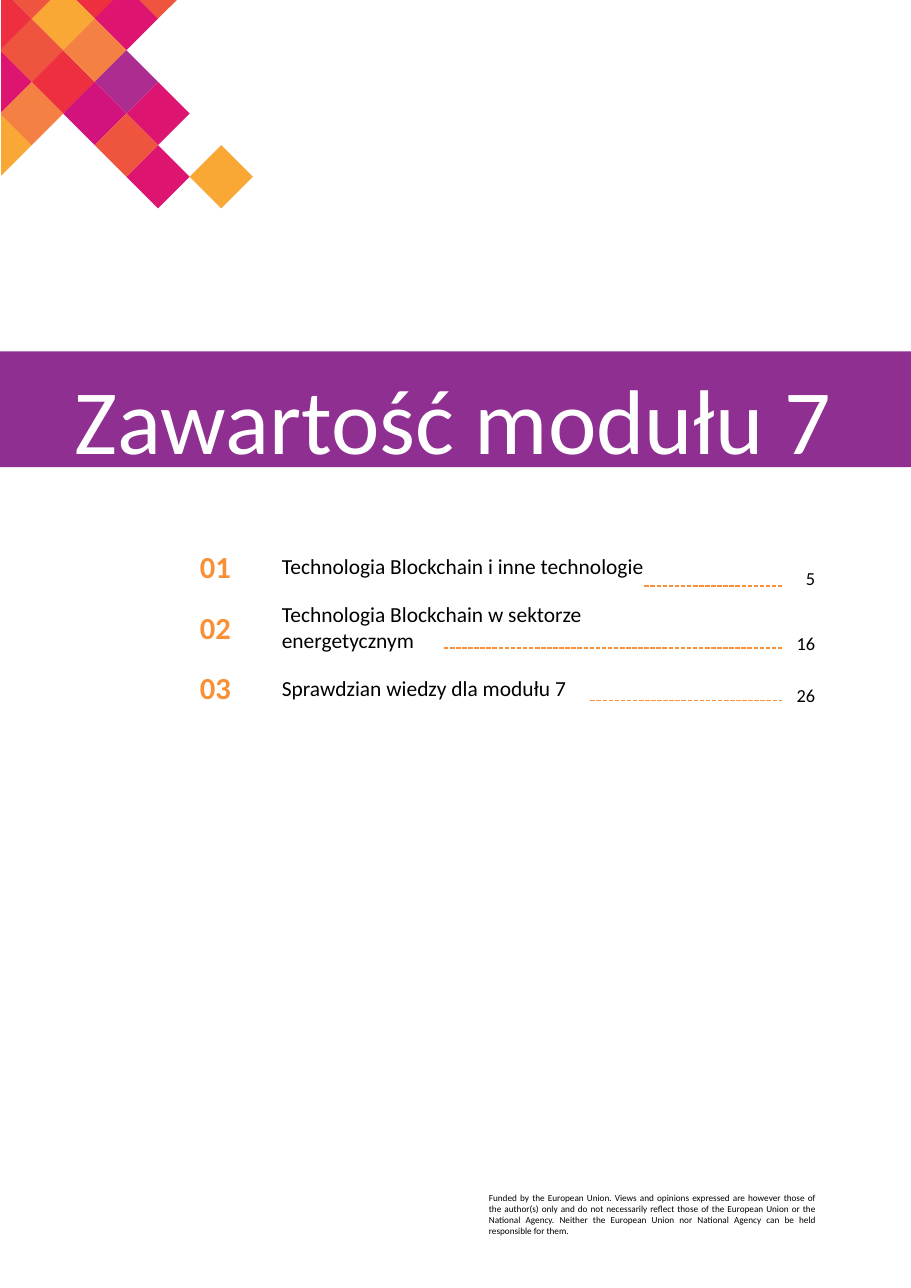
from dataclasses import dataclass

from lxml.etree import SubElement
from pptx import Presentation
from pptx.dml.color import RGBColor
from pptx.enum.dml import MSO_LINE
from pptx.enum.shapes import MSO_CONNECTOR, MSO_SHAPE
from pptx.enum.text import MSO_ANCHOR, MSO_AUTO_SIZE, PP_ALIGN
from pptx.oxml.ns import qn
from pptx.util import Inches, Pt


@dataclass(frozen=True)
class Theme:
    font: str = "Calibri"
    band: str = "8E2F91"
    accent: str = "F79037"
    text: str = "000000"
    on_band: str = "FFFFFF"
    red: str = "ED2F40"
    pink: str = "DD1470"
    magenta: str = "D3137D"
    purple: str = "AC2C90"
    coral: str = "EF543F"
    orange: str = "F48043"
    yellow: str = "F9A835"
    title_size: float = 60
    number_size: float = 20
    entry_size: float = 14
    page_size: float = 12
    note_size: float = 6


THEME = Theme()
PAGE_W, PAGE_H = 8.27, 11.69

# Mosaic lattice: a tile at (column, row) is a diamond centred on its node
STEP, MOSAIC_TOP = 0.287, 0.17
CLIP_LEFT, CLIP_TOP = 0.01, -0.04
TILES = [
    (3, -1, THEME.red), (4, 0, THEME.pink), (5, -1, THEME.coral),
    (2, 0, THEME.yellow), (1, 1, THEME.coral), (2, 2, THEME.red),
    (3, 1, THEME.orange), (0, 2, THEME.pink), (0, 4, THEME.yellow),
    (1, 3, THEME.orange), (7, 5, THEME.yellow), (5, 5, THEME.pink),
    (5, 3, THEME.pink), (4, 2, THEME.purple), (3, 3, THEME.magenta),
    (4, 4, THEME.coral), (1, -1, THEME.coral), (0, 0, THEME.red),
]

# Entry, its width, page, top of page number, leader start, leader height
CONTENTS = [
    ("Technologia Blockchain i inne technologie", 4.35, "5", 5.06, 5.85, 5.32),
    ("Technologia Blockchain w sektorze energetycznym", 3.88, "16", 5.65, 4.03, 5.88),
    ("Sprawdzian wiedzy dla modułu 7", 3.88, "26", 6.12, 5.36, 6.36),
]
FIRST_TOP, PITCH, ROW_H = 4.95, 0.55, 0.38

NOTE = (
    "Funded by the European Union. Views and opinions expressed are however "
    "those of the author(s) only and do not necessarily reflect those of the "
    "European Union or the National Agency. Neither the European Union nor "
    "National Agency can be held responsible for them."
)


def clip(points, axis, low):
    """Cut away the part of a polygon whose coordinate on axis is below low."""
    kept = []
    for a, b in zip(points, points[1:] + points[:1]):
        if a[axis] >= low:
            kept.append(a)
        if (a[axis] < low) != (b[axis] < low):
            t = (low - a[axis]) / (b[axis] - a[axis])
            kept.append(tuple(p + t * (q - p) for p, q in zip(a, b)))
    return kept


class Page:
    def __init__(self, slide, theme):
        self.s, self.theme = slide, theme

    def paint(self, shape, color):
        shape.shadow.inherit = False
        shape.fill.solid()
        shape.fill.fore_color.rgb = RGBColor.from_string(color)
        shape.line.fill.background()

    def rect(self, x, y, w, h, color):
        sp = self.s.shapes.add_shape(MSO_SHAPE.RECTANGLE, *map(Inches, (x, y, w, h)))
        self.paint(sp, color)

    def tile(self, column, row, color):
        cx, cy = column * STEP, MOSAIC_TOP + row * STEP
        points = [(cx, cy - STEP), (cx + STEP, cy), (cx, cy + STEP), (cx - STEP, cy)]
        points = clip(clip(points, 0, CLIP_LEFT), 1, CLIP_TOP)
        start, *rest = [(Inches(x), Inches(y)) for x, y in points]
        builder = self.s.shapes.build_freeform(*start)
        builder.add_line_segments(rest, close=True)
        self.paint(builder.convert_to_shape(), color)

    def set_text(self, sp, text, size, color=None, align=PP_ALIGN.LEFT,
                 anchor=MSO_ANCHOR.MIDDLE, bold=False):
        tf = sp.text_frame
        frame = {"word_wrap": True, "auto_size": MSO_AUTO_SIZE.NONE,
                 "vertical_anchor": anchor}
        for name, value in frame.items():
            setattr(tf, name, value)
        p = tf.paragraphs[0]
        p.alignment = align
        r = p.add_run()
        r.text = text
        for name, value in {"name": self.theme.font, "size": Pt(size), "bold": bold}.items():
            setattr(r.font, name, value)
        r.font.color.rgb = RGBColor.from_string(color or self.theme.text)

    def text(self, x, y, w, h, text, size, **style):
        sp = self.s.shapes.add_textbox(*map(Inches, (x, y, w, h)))
        self.set_text(sp, text, size, **style)

    def title(self, x, y, w, h, text):
        sp = self.s.shapes.title
        box = {"left": x, "top": y, "width": w, "height": h}
        for name, value in box.items():
            setattr(sp, name, Inches(value))
        self.set_text(sp, text, self.theme.title_size, color=self.theme.on_band,
                      anchor=MSO_ANCHOR.TOP)
        self.s.shapes._spTree.append(sp._element)  # in front of the band

    def leader(self, x1, x2, y):
        line = self.s.shapes.add_connector(
            MSO_CONNECTOR.STRAIGHT, *map(Inches, (x1, y, x2, y)))
        line.line.color.rgb = RGBColor.from_string(self.theme.accent)
        line.line.width = Pt(1)
        line.line.dash_style = MSO_LINE.SQUARE_DOT
        SubElement(line._element.spPr, qn("a:effectLst"))


def main():
    prs = Presentation()
    prs.slide_width, prs.slide_height = Inches(PAGE_W), Inches(PAGE_H)
    page = Page(prs.slides.add_slide(prs.slide_layouts[5]), THEME)

    page.rect(0, 3.19, PAGE_W, 1.05, THEME.band)
    for tile in TILES:
        page.tile(*tile)
    page.text(4.34, 10.77, 3.16, 0.5, NOTE, THEME.note_size,
              align=PP_ALIGN.JUSTIFY, anchor=MSO_ANCHOR.TOP)

    for i, (entry, width, number, number_top, start, leader_y) in enumerate(CONTENTS):
        top = FIRST_TOP + i * PITCH
        page.text(1.6, top, 0.71, ROW_H, f"{i + 1:02}", THEME.number_size,
                  color=THEME.accent, align=PP_ALIGN.CENTER, bold=True)
        page.text(2.46, top, width, ROW_H, entry, THEME.entry_size)
        page.text(7, number_top, 0.5, ROW_H, number, THEME.page_size,
                  align=PP_ALIGN.RIGHT)
        page.leader(start, 7.1, leader_y)

    page.title(0.58, 3.24, 7.25, 1.06, "Zawartość modułu 7")
    prs.save("out.pptx")


if __name__ == "__main__":
    main()
